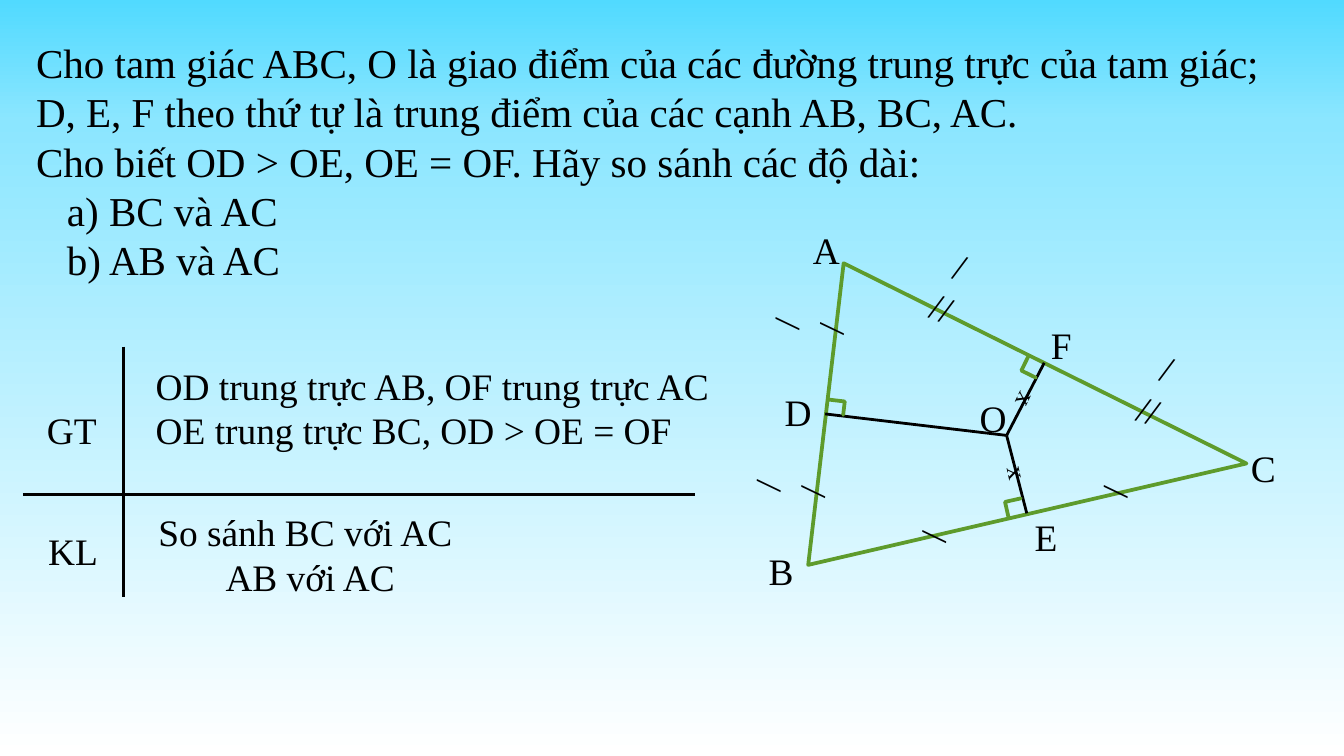
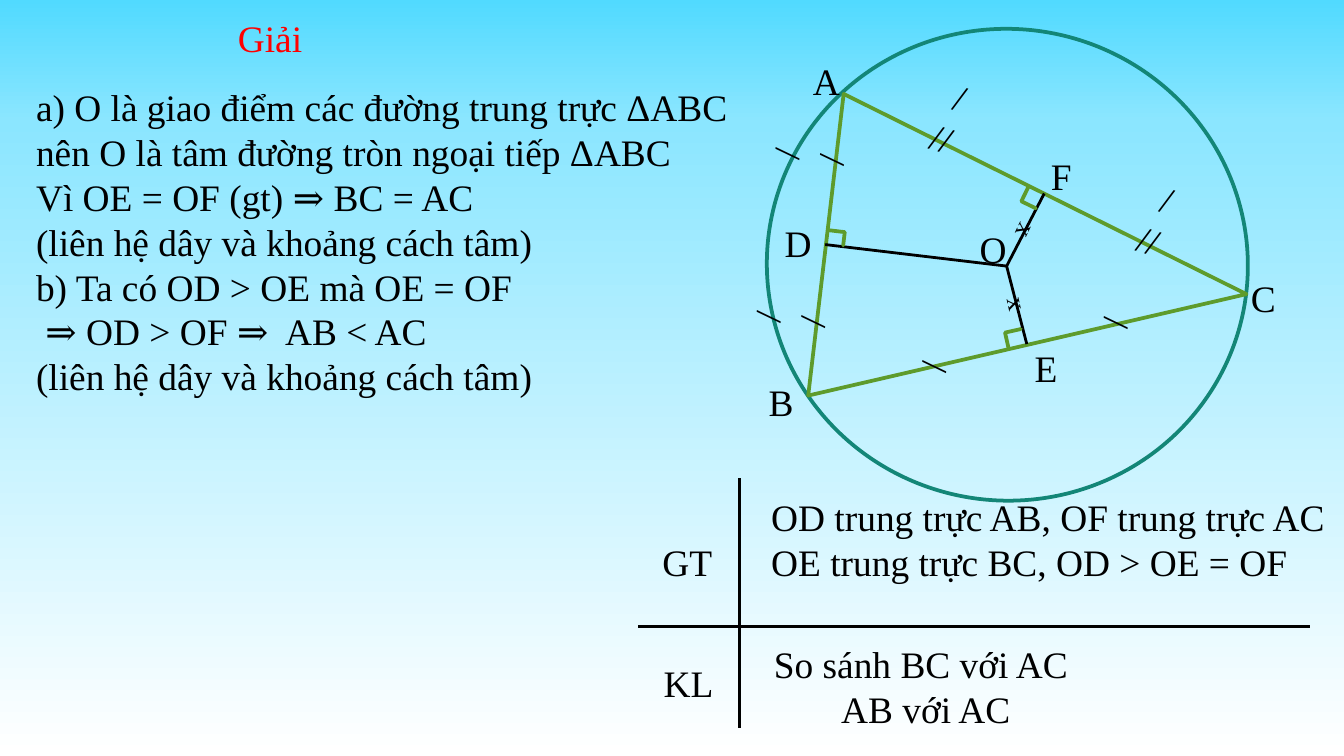
from copy import deepcopy

from pptx import Presentation
from pptx.dml.color import RGBColor
from pptx.enum import shapes, text
from pptx.oxml import ns, xmlchemy
from pptx.util import Inches, Pt

SKY = RGBColor(0x51, 0xDA, 0xFF)
PALE_SKY = RGBColor(0x8B, 0xE6, 0xFF)
WHITE = RGBColor(0xFF, 0xFF, 0xFF)
BLACK = RGBColor(0x00, 0x00, 0x00)
RED = RGBColor(0xFF, 0x00, 0x00)
LEAF = RGBColor(0x5E, 0x9B, 0x2C)
LIME = RGBColor(0x7F, 0xD1, 0x3B)
TEAL = RGBColor(0x13, 0x86, 0x77)
FONT = "Times New Roman"
SYMBOL_FONT = "Cambria"
ARROW = "⇒"
BLANK, TITLE_ONLY = 6, 5


def new_slide(prs, layout):
    s = prs.slides.add_slide(prs.slide_layouts[layout])
    fill = s.background.fill
    fill.gradient()
    stop_list = s._element.find(".//" + ns.qn("a:gsLst"))
    stop_list.append(deepcopy(stop_list[0]))
    stops = [(0, SKY), (0.16, PALE_SKY), (1, WHITE)]
    for stop, (position, color) in zip(fill.gradient_stops, stops):
        stop.position = position
        stop.color.rgb = color
    fill.gradient_angle = 270
    return s


def place(sp, x, y, w, h):
    sp.left, sp.top, sp.width, sp.height = (Inches(v) for v in (x, y, w, h))


def write(sp, lines, size=20, color=BLACK, wrap=False):
    """Each line is a string, or a string with its left indent in inches."""
    tf = sp.text_frame
    tf.word_wrap = wrap
    tf.auto_size = text.MSO_AUTO_SIZE.SHAPE_TO_FIT_TEXT
    tf.vertical_anchor = text.MSO_ANCHOR.TOP
    for i, line in enumerate(lines):
        words, indent = line if isinstance(line, tuple) else (line, 0)
        p = tf.paragraphs[0] if i == 0 else tf.add_paragraph()
        p.alignment = text.PP_ALIGN.LEFT
        if indent:
            p._p.get_or_add_pPr().set("marL", str(Inches(indent)))
        # Implication arrows get their own run in the symbol font
        for j, part in enumerate(words.split(ARROW)):
            if j:
                add_run(p, ARROW, SYMBOL_FONT, size, color)
            if part:
                add_run(p, part, FONT, size, color)


def add_run(p, words, font, size, color):
    r = p.add_run()
    r.text = words
    r.font.name = font
    r.font.size = Pt(size)
    r.font.color.rgb = color


def add_text(s, x, y, w, h, lines, size=20, wrap=False, rotation=0):
    sp = s.shapes.add_textbox(0, 0, 0, 0)
    write(sp, lines, size, wrap=wrap)
    place(sp, x, y, w, h)
    sp.rotation = rotation


def add_line(s, x1, y1, x2, y2):
    line = s.shapes.add_connector(shapes.MSO_CONNECTOR.STRAIGHT,
                                  *(Inches(v) for v in (x1, y1, x2, y2)))
    line.line.color.rgb = BLACK
    line.line.width = Pt(1.5)
    line._element.spPr.append(xmlchemy.OxmlElement("a:effectLst"))


def add_outline(s, kind, x, y, w, h, rotation, color, fill=None):
    sp = s.shapes.add_shape(kind, *(Inches(v) for v in (x, y, w, h)))
    sp.shadow.inherit = False
    sp.rotation = rotation
    sp.line.color.rgb = color
    sp.line.width = Pt(2)
    if fill is None:
        sp.fill.background()
    else:
        sp.fill.solid()
        sp.fill.fore_color.rgb = fill
    return sp


def triangle_figure(s, left, top, circle=False):
    """Triangle ABC with its perpendicular bisectors meeting at O."""
    kind = shapes.MSO_SHAPE
    tilt = 96.7
    if circle:
        add_outline(s, kind.OVAL, left + 0.12, top, 3.51, 3.58, tilt, TEAL)
    add_outline(s, kind.ISOSCELES_TRIANGLE, left + 0.96, top + 0.25,
                2.26, 3.15, tilt, LEAF)

    # Segments from O to the midpoints D, F, E
    for x, y in [(0.52, 1.64), (2.15, 1.26), (2.02, 2.38)]:
        add_line(s, left + 1.87, top + 1.8, left + x, top + y)

    # Right angles at F, E, D
    corners = [(2, 1.23, 0.12, 296, False), (1.87, 2.28, 0.12, 257.3, True),
               (0.55, 1.53, 0.1, tilt, False)]
    for x, y, w, rotation, flip in corners:
        sp = add_outline(s, kind.HALF_FRAME, left + x, top + y, w, 0.12,
                         rotation, LEAF, LIME)
        sp.adjustments[0] = sp.adjustments[1] = 0
        if flip:
            sp._element.spPr.xfrm.set("flipH", "1")

    # Equal-length ticks
    ticks = [("//", 0.43, 0.83, 0.33, 0.42, tilt, 20),
             ("/", 2.58, 2.01, 0.26, 0.42, tilt, 20),
             ("/", 1.23, 2.34, 0.26, 0.42, tilt, 20),
             ("//", 0.29, 2.04, 0.33, 0.42, tilt, 20),
             ("///", 1.14, 0.68, 0.41, 0.41, 197.8, 20),
             ("///", 2.68, 1.44, 0.41, 0.41, 197.8, 20),
             ("x", 1.89, 1.38, 0.28, 0.32, 115.5, 14),
             ("x", 1.82, 1.91, 0.28, 0.32, 77.8, 14)]
    for mark, x, y, w, h, rotation, size in ticks:
        add_text(s, left + x, top + y, w, h, [mark], size, rotation=rotation)

    # Point names
    points = [("A", 0.33, 0.2, 0.39), ("B", 0, 2.59, 0.37),
              ("C", 3.59, 1.82, 0.37), ("F", 2.1, 0.91, 0.34),
              ("D", 0.12, 1.41, 0.39), ("E", 1.98, 2.34, 0.36),
              ("O", 1.57, 1.45, 0.39)]
    for name, x, y, w in points:
        add_text(s, left + x, top + y, w, 0.41, [name])


def hypothesis_block(s, left, top):
    """Given (GT) above the rule, to prove (KL) below it."""
    add_line(s, left, top + 1.1, left + 5, top + 1.1)
    add_line(s, left + 0.75, top, left + 0.75, top + 1.86)
    add_text(s, left + 0.08, top + 0.4, 0.58, 0.44, ["GT"])
    add_text(s, left + 0.09, top + 1.3, 0.58, 0.44, ["KL"])
    add_text(s, left + 0.91, top + 1.16, 2.5, 0.77,
             ["So sánh BC với AC", "\tAB với AC"], wrap=True)
    add_text(s, left + 0.89, top + 0.07, 4.36, 0.77,
             ["OD trung trực AB, OF trung trực AC",
              "OE trung trực BC, OD > OE = OF"])


def problem_slide(prs):
    s = new_slide(prs, BLANK)
    add_text(s, 0.17, 0.23, 9.48, 1.95, [
        "Cho tam giác ABC, O là giao điểm của các đường trung trực của tam giác;",
        "D, E, F theo thứ tự là trung điểm của các cạnh AB, BC, AC.",
        "Cho biết OD > OE, OE = OF. Hãy so sánh các độ dài:",
        ("a) BC và AC", 0.23),
        ("b) AB và AC", 0.23)], size=22)
    triangle_figure(s, 5.62, 1.44)
    hypothesis_block(s, 0.17, 2.58)


def solution_slide(prs):
    s = new_slide(prs, TITLE_ONLY)
    title = s.shapes.title
    write(title, ["Giải"], color=RED)
    place(title, 1.67, 0.06, 0.68, 0.44)
    triangle_figure(s, 5.62, 0.18, circle=True)
    hypothesis_block(s, 4.75, 3.56)
    add_text(s, 0.17, 0.58, 5.37, 2.46, [
        "a) O là giao điểm các đường trung trực ΔABC",
        "nên O là tâm đường tròn ngoại tiếp ΔABC",
        "Vì OE = OF (gt) ⇒ BC = AC",
        "(liên hệ dây và khoảng cách tâm)",
        "b) Ta có OD > OE mà OE = OF",
        " ⇒ OD > OF ⇒  AB < AC",
        "(liên hệ dây và khoảng cách tâm)"])


def main():
    prs = Presentation()
    # Widescreen, 16 to 9
    prs.slide_width = Inches(10)
    prs.slide_height = prs.slide_width * 9 // 16
    problem_slide(prs)
    solution_slide(prs)
    prs.save("out.pptx")


if __name__ == "__main__":
    main()
